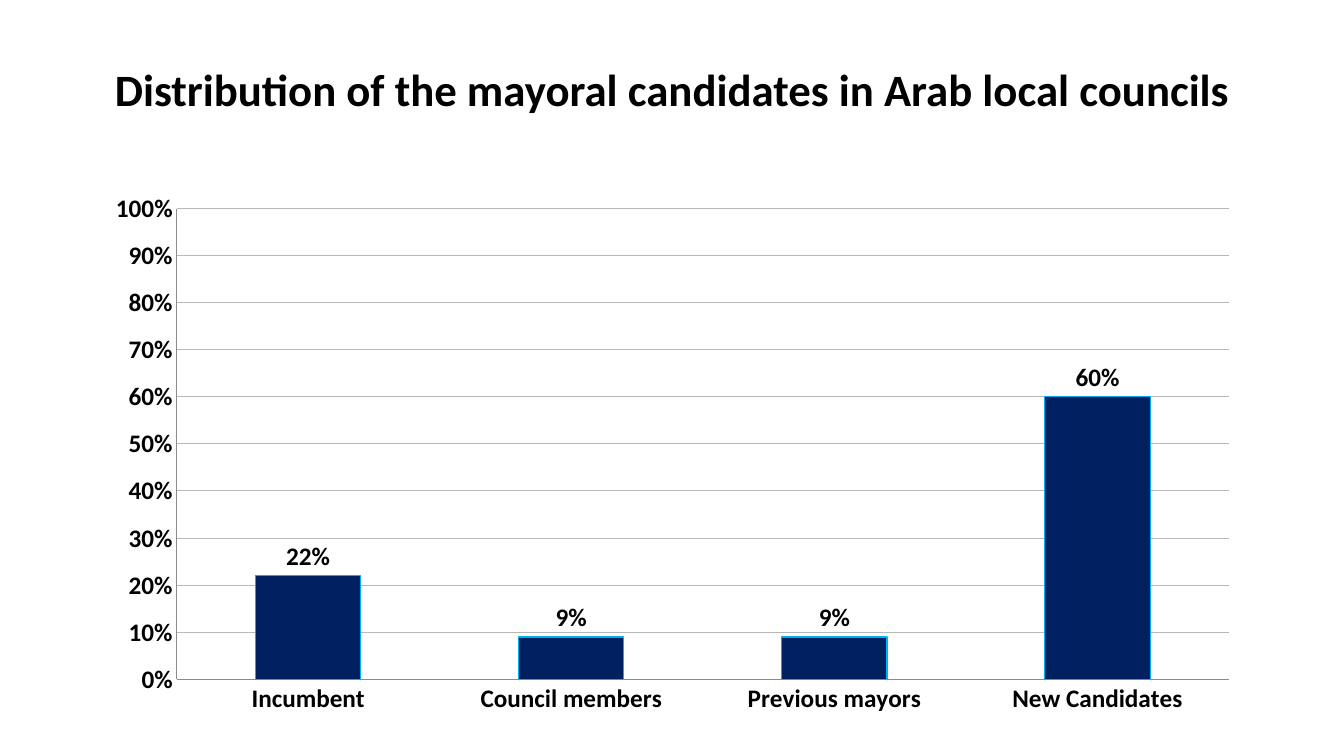
from pptx import Presentation
from pptx.chart.data import CategoryChartData
from pptx.dml.color import RGBColor
from pptx.enum.chart import XL_CHART_TYPE, XL_LABEL_POSITION, XL_TICK_MARK
from pptx.enum.text import MSO_ANCHOR, PP_ALIGN
from pptx.util import Inches, Pt

BLACK = RGBColor(0x00, 0x00, 0x00)
NAVY = RGBColor(0x00, 0x20, 0x60)
CYAN = RGBColor(0x00, 0xB0, 0xF0)
GRID = RGBColor(0xB7, 0xB7, 0xB7)
AXIS = RGBColor(0x8B, 0x8B, 0x8B)

LEFT, WIDTH = 0.92, 11.5
SHARES = {
    "Incumbent": 0.22,
    "Council members": 0.09,
    "Previous mayors": 0.09,
    "New Candidates": 0.6,
}


def style(font, size):
    look = {"name": "Calibri", "size": Pt(size), "bold": True}
    for key, value in look.items():
        setattr(font, key, value)
    font.color.rgb = BLACK


def stroke(line, color):
    line.color.rgb = color
    line.width = Pt(0.75)


def add_title(slide, text, box):
    title = slide.shapes.title
    for key, value in zip(("left", "top", "width", "height"), box):
        setattr(title, key, Inches(value))
    frame = title.text_frame
    frame.text = text
    frame.word_wrap = True
    frame.vertical_anchor = MSO_ANCHOR.MIDDLE
    para = frame.paragraphs[0]
    para.alignment = PP_ALIGN.CENTER
    para.line_spacing = 0.9
    style(para.runs[0].font, 32)


def add_bars(slide, shares, box):
    data = CategoryChartData(number_format="0%")
    data.categories = list(shares)
    data.add_series("Series 1", list(shares.values()))
    chart = slide.shapes.add_chart(
        XL_CHART_TYPE.COLUMN_CLUSTERED, *map(Inches, box), data
    ).chart
    chart.has_title = False
    chart.has_legend = False
    style(chart.font, 18)

    # Axes and grid
    for axis in (chart.category_axis, chart.value_axis):
        axis.major_tick_mark = XL_TICK_MARK.NONE
        axis.minor_tick_mark = XL_TICK_MARK.NONE
        stroke(axis.format.line, AXIS)
    scale = {"minimum_scale": 0, "maximum_scale": 1, "major_unit": 0.1}
    for key, value in scale.items():
        setattr(chart.value_axis, key, value)
    ticks = chart.value_axis.tick_labels
    ticks.number_format = "0%"
    ticks.number_format_is_linked = False
    stroke(chart.value_axis.major_gridlines.format.line, GRID)

    # Bars
    plot = chart.plots[0]
    plot.gap_width = 150
    plot.vary_by_categories = False
    bars = plot.series[0].format
    bars.fill.solid()
    bars.fill.fore_color.rgb = NAVY
    stroke(bars.line, CYAN)

    # Value labels
    plot.has_data_labels = True
    tags = {
        "show_value": True,
        "number_format": "0%",
        "number_format_is_linked": False,
        "position": XL_LABEL_POSITION.OUTSIDE_END,
    }
    for key, value in tags.items():
        setattr(plot.data_labels, key, value)
    style(plot.data_labels.font, 18)


def main():
    deck = Presentation()
    deck.slide_width = Inches(13.33)
    deck.slide_height = Inches(7.5)
    slide = deck.slides.add_slide(deck.slide_layouts[5])
    add_title(
        slide,
        "Distribution of the mayoral candidates in Arab local councils",
        (LEFT, 0.11, WIDTH, 1.6),
    )
    add_bars(slide, SHARES, (LEFT, 1.81, WIDTH, 5.38))
    deck.save("out.pptx")


if __name__ == "__main__":
    main()
